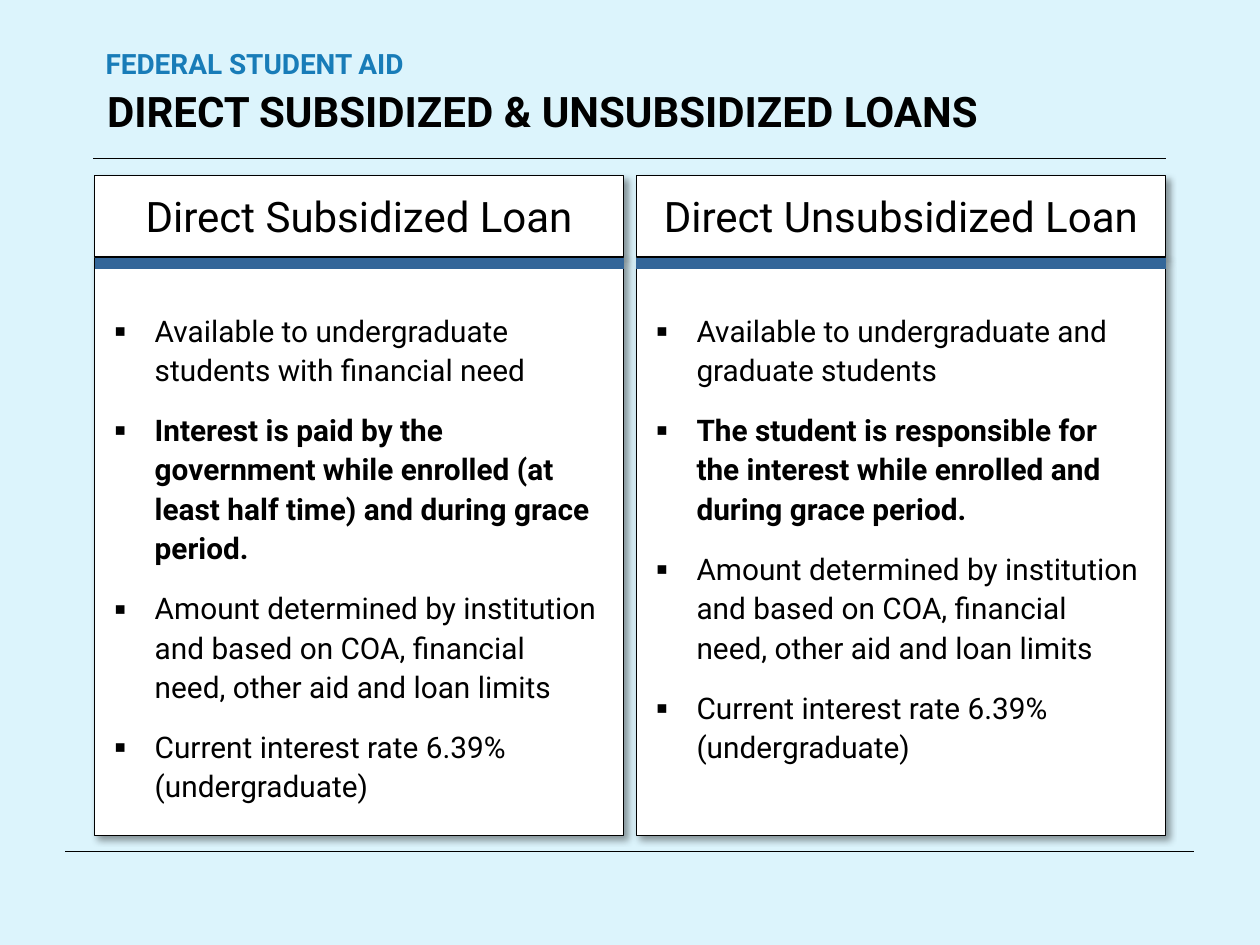
from lxml import etree
from pptx import Presentation
from pptx.dml.color import RGBColor
from pptx.enum.shapes import MSO_CONNECTOR, MSO_SHAPE
from pptx.enum.text import MSO_ANCHOR, MSO_AUTO_SIZE, PP_ALIGN
from pptx.oxml import parse_xml
from pptx.oxml.ns import nsdecls, qn
from pptx.util import Inches, Pt

# Content
KICKER = "FEDERAL STUDENT AID"
TITLE = "DIRECT SUBSIDIZED & UNSUBSIDIZED LOANS"
AMOUNT = ("Amount determined by institution and based on COA, financial need, "
          "other aid and loan limits")
RATE = "Current interest rate 6.39% (undergraduate)"
LOANS = [  # heading, bullets as (text, bold)
    ("Direct Subsidized Loan", [
        ("Available to undergraduate students with financial need", False),
        ("Interest is paid by the government while enrolled (at least half time) "
         "and during grace period.", True),
        (AMOUNT, False),
        (RATE, False)]),
    ("Direct Unsubsidized Loan", [
        ("Available to undergraduate and graduate students", False),
        ("The student is responsible for the interest while enrolled and during "
         "grace period.", True),
        (AMOUNT, False),
        (RATE, False)]),
]
RULES = [(0.52, 9.48, 6.76), (0.74, 9.25, 1.26)]  # left, right, y

# Style and layout
FONT = "Roboto"
BLACK, WHITE, BLUE, BAR, BACKGROUND = "000000", "FFFFFF", "187CB8", "336699", "DCF4FC"
LEFT, CARD_W, GAP = 0.75, 4.2, 0.1
HEAD_Y, HEAD_H, BODY_Y, BODY_H, BAR_Y = 1.39, 0.65, 2.05, 4.58, 2.09


def rgb(color):
    return RGBColor.from_string(color)


def style(p, size, color=BLACK, bold=False):
    for r in p.runs:
        r.font.name, r.font.size, r.font.bold = FONT, Pt(size), bold
        r.font.color.rgb = rgb(color)


def add_line(shapes, x1, x2, y, color, width):
    line = shapes.add_connector(MSO_CONNECTOR.STRAIGHT, Inches(x1), Inches(y),
                                Inches(x2), Inches(y))
    line.line.color.rgb, line.line.width = rgb(color), Pt(width)
    etree.SubElement(line._element.spPr, qn("a:effectLst"))


def add_card(shapes, x, y, h):
    sp = shapes.add_shape(MSO_SHAPE.RECTANGLE, Inches(x), Inches(y),
                          Inches(CARD_W), Inches(h))
    sp.fill.solid()
    sp.fill.fore_color.rgb = rgb(WHITE)
    sp.line.color.rgb, sp.line.width = rgb(BLACK), Pt(0.75)
    sp._element.spPr.append(parse_xml(
        f'<a:effectLst {nsdecls("a")}>'
        f'<a:outerShdw blurRad="{Pt(4)}" dist="{Pt(3)}" dir="{45 * 60000}" '
        f'algn="tl" rotWithShape="0"><a:srgbClr val="{BLACK}">'
        '<a:alpha val="40000"/></a:srgbClr></a:outerShdw></a:effectLst>'))
    sp.text_frame.word_wrap = True
    return sp


def add_heading(shapes, x, text):
    tf = add_card(shapes, x, HEAD_Y, HEAD_H).text_frame
    tf.text, tf.vertical_anchor = text, MSO_ANCHOR.MIDDLE
    p = tf.paragraphs[0]
    p.alignment = PP_ALIGN.CENTER
    style(p, 24)


def add_body(shapes, x, bullets):
    tf = add_card(shapes, x, BODY_Y, BODY_H).text_frame
    tf.vertical_anchor = MSO_ANCHOR.TOP
    tf.margin_left, tf.margin_top = Inches(0.1), Inches(0.4)
    tf.margin_right, tf.margin_bottom = Inches(0.2), Inches(0.05)
    for i, (text, bold) in enumerate(bullets):
        p = tf.add_paragraph() if i else tf.paragraphs[0]
        p.text, p.level, p.alignment = text, 1, PP_ALIGN.LEFT
        pPr = p._p.get_or_add_pPr()
        pPr.set("marL", str(Inches(0.38)))
        pPr.set("indent", str(Inches(-0.32)))
        etree.SubElement(pPr, qn("a:buFont"), typeface=FONT)
        etree.SubElement(pPr, qn("a:buChar"), char="▪")
        p.line_spacing, p.space_after = 1.1, Pt(12)
        style(p, 17, bold=bold)


def set_heading_line(sp, text, box, size, color):
    sp.left, sp.top, sp.width, sp.height = map(Inches, box)
    tf = sp.text_frame
    tf.text, tf.word_wrap = text, True
    tf.auto_size, tf.vertical_anchor = MSO_AUTO_SIZE.NONE, MSO_ANCHOR.TOP
    p = tf.paragraphs[0]
    p.alignment, p.line_spacing = PP_ALIGN.LEFT, 0.9
    style(p, size, color, True)


def main():
    prs = Presentation()
    prs.slide_width, prs.slide_height = Inches(10), Inches(7.5)
    s = prs.slides.add_slide(prs.slide_layouts[5])
    s.background.fill.solid()
    s.background.fill.fore_color.rgb = rgb(BACKGROUND)

    # Rules and headings
    for x1, x2, y in RULES:
        add_line(s.shapes, x1, x2, y, BLACK, 0.5)
    kicker = s.shapes.add_textbox(0, 0, 0, 0)
    set_heading_line(kicker, KICKER, (0.74, 0.35, 8.5, 0.42), 16, BLUE)
    set_heading_line(s.shapes.title, TITLE, (0.75, 0.67, 8.5, 0.53), 24, BLACK)

    # Loan cards: heading, then body grouped with its bar
    for i, (heading, bullets) in enumerate(LOANS):
        x = LEFT + i * (CARD_W + GAP)
        add_heading(s.shapes, x, heading)
        group = s.shapes.add_group_shape()
        add_body(group.shapes, x, bullets)
        add_line(group.shapes, x, x + CARD_W, BAR_Y, BAR, 6.5)

    prs.save("out.pptx")


if __name__ == "__main__":
    main()
